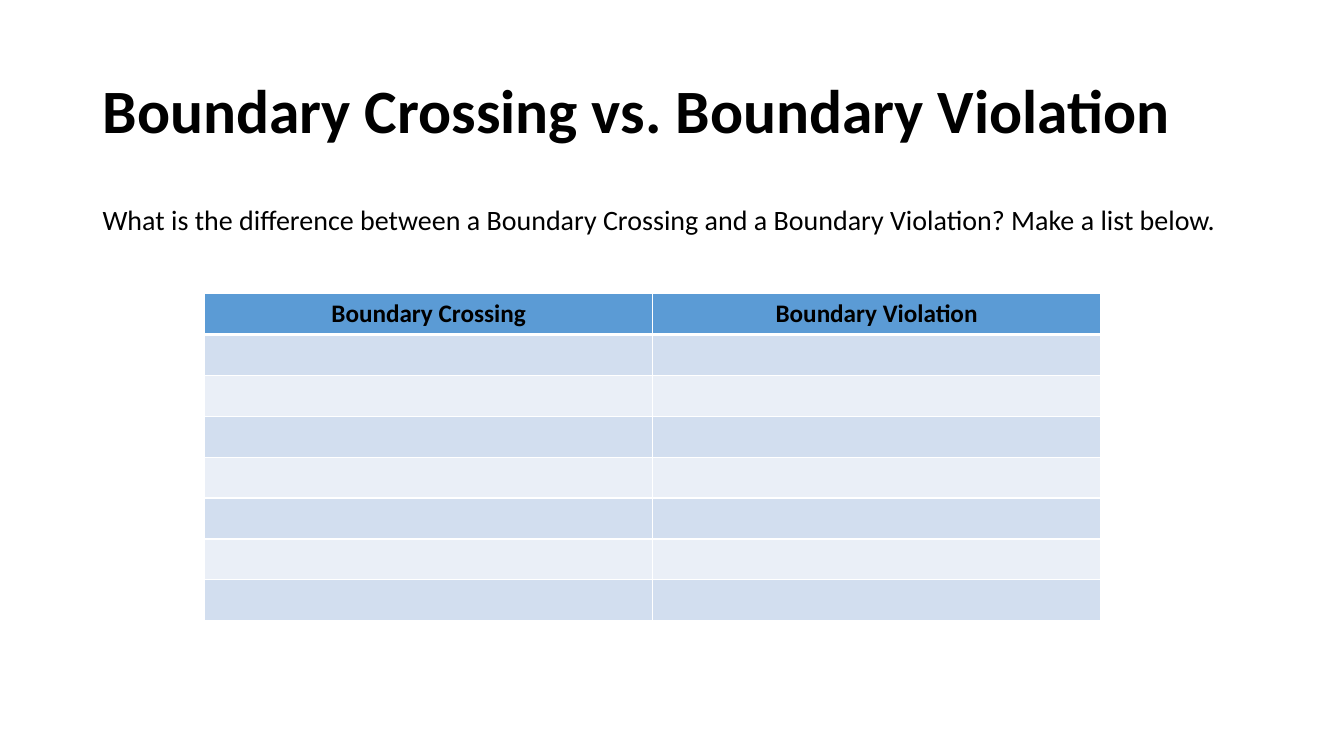
import pptx
import pptx.util
import pptx.dml.color
import pptx.enum.text
import pptx.oxml.ns
from lxml import etree

Cm = pptx.util.Cm
Pt = pptx.util.Pt
PP_ALIGN = pptx.enum.text.PP_ALIGN
MSO_ANCHOR = pptx.enum.text.MSO_ANCHOR
qn = pptx.oxml.ns.qn


def color(value):
    return pptx.dml.color.RGBColor.from_string(value)


def write(frame, text, size, bold, align, spacing):
    frame.text = text
    paragraph = frame.paragraphs[0]
    paragraph.alignment = align
    paragraph.line_spacing = spacing
    font = paragraph.runs[0].font
    font.name = "Calibri"
    font.size = Pt(size)
    font.bold = bold
    font.color.rgb = color("000000")
    return paragraph


deck = pptx.Presentation()
deck.slide_width = Cm(33.87)
deck.slide_height = Cm(19.05)
slide = deck.slides.add_slide(deck.slide_layouts[1])

title = slide.shapes.title
question = slide.placeholders[1]
for placeholder, top, height in ((title, 1.01, 3.68), (question, 5.07, 12.09)):
    placeholder.left, placeholder.top = Cm(2.33), Cm(top)
    placeholder.width, placeholder.height = Cm(29.21), Cm(height)
    placeholder.text_frame.auto_size = pptx.enum.text.MSO_AUTO_SIZE.NONE

write(title.text_frame, "Boundary Crossing vs. Boundary Violation", 44, True, PP_ALIGN.LEFT, 0.9)
title.text_frame.vertical_anchor = MSO_ANCHOR.MIDDLE

prompt = write(
    question.text_frame,
    "What is the difference between a Boundary Crossing and a Boundary Violation? Make a list below.",
    20, False, PP_ALIGN.LEFT, 0.9,
)
prompt.space_before = Pt(10)
prompt_properties = prompt._p.get_or_add_pPr()
prompt_properties.set("marL", "0")
prompt_properties.set("indent", "0")
etree.SubElement(prompt_properties, qn("a:buNone"))

headings = ("Boundary Crossing", "Boundary Violation")
row_count = 8
comparison = slide.shapes.add_table(
    row_count, len(headings), Cm(5.16), Cm(7.4), Cm(22.58), Cm(8.24)
).table

for row in range(row_count):
    for column, heading in enumerate(headings):
        cell = comparison.cell(row, column)
        edges = {"L": 1, "R": 1, "T": 3 if row == 1 else 1, "B": 3 if row == 0 else 1}
        cell_properties = cell._tc.get_or_add_tcPr()
        for edge, width in edges.items():
            border = etree.SubElement(cell_properties, qn("a:ln" + edge), w=str(Pt(width)))
            border_fill = etree.SubElement(border, qn("a:solidFill"))
            etree.SubElement(border_fill, qn("a:srgbClr"), val="FFFFFF")
        cell.fill.solid()
        if row == 0:
            cell.fill.fore_color.rgb = color("5B9BD5")
            write(cell.text_frame, heading, 18, True, PP_ALIGN.CENTER, 1.0)
        else:
            cell.fill.fore_color.rgb = color("D2DEEF" if row % 2 else "EAEFF7")

deck.save("out.pptx")
